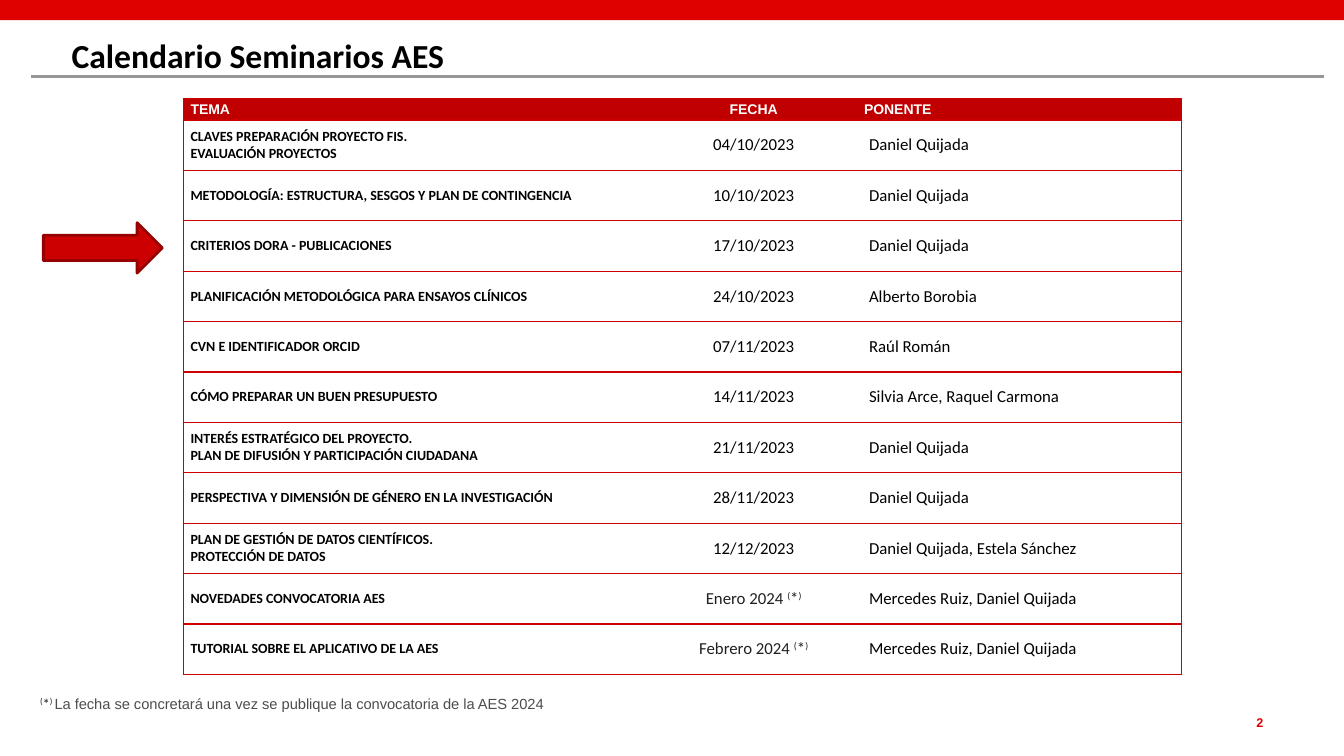
from dataclasses import dataclass

from lxml.etree import SubElement
from pptx import Presentation
from pptx.dml.color import RGBColor
from pptx.enum.shapes import MSO_CONNECTOR, MSO_SHAPE
from pptx.enum.text import MSO_ANCHOR, PP_ALIGN
from pptx.oxml.ns import qn
from pptx.util import Inches, Pt


@dataclass(frozen=True)
class Theme:
    heading_font: str = "Calibri"
    label_font: str = "Arial"
    band: str = "DF0000"
    rule: str = "969696"
    title: str = "010000"
    header: str = "C00000"
    border: str = "CC0000"
    arrow_edge: str = "970000"
    ink: str = "000000"
    pending: str = "202020"
    note: str = "4D4D4D"
    paper: str = "FFFFFF"
    title_size: float = 24
    date_size: float = 12
    note_size: float = 10.5
    topic_size: float = 10
    page_size: float = 9


@dataclass(frozen=True)
class Style:
    font: str
    size: float
    color: str
    bold: bool = False


class SlideBuilder:
    def __init__(self, slide, theme):
        self.slide = slide
        self.theme = theme

    def add_runs(self, paragraph, pieces):
        for wording, style, raised in pieces:
            run = paragraph.add_run()
            run.text = wording
            run.font.name = style.font
            run.font.size = Pt(style.size)
            run.font.bold = style.bold
            run.font.color.rgb = RGBColor.from_string(style.color)
            if raised:
                run._r.get_or_add_rPr().set("baseline", "30000")

    def text(self, box, pieces, inset=(0.1, 0.05), align=PP_ALIGN.LEFT):
        frame = self.slide.shapes.add_textbox(*map(Inches, box)).text_frame
        frame.word_wrap = True
        frame.margin_left = frame.margin_right = Inches(inset[0])
        frame.margin_top = frame.margin_bottom = Inches(inset[1])
        frame.paragraphs[0].alignment = align
        self.add_runs(frame.paragraphs[0], pieces)

    def shape(self, preset, box, fill, edge=None, width=0):
        shape = self.slide.shapes.add_shape(preset, *map(Inches, box))
        shape.shadow.inherit = False
        shape.fill.solid()
        shape.fill.fore_color.rgb = RGBColor.from_string(fill)
        if edge:
            shape.line.color.rgb = RGBColor.from_string(edge)
            shape.line.width = Pt(width)
        else:
            shape.line.fill.background()

    def line(self, start, end, color, width):
        line = self.slide.shapes.add_connector(
            MSO_CONNECTOR.STRAIGHT, *map(Inches, start + end))
        line.line.color.rgb = RGBColor.from_string(color)
        line.line.width = Pt(width)
        SubElement(line._element.spPr, qn("a:effectLst"))

    def table(self, corner, widths, heights):
        table = self.slide.shapes.add_table(
            len(heights), len(widths), *map(Inches, corner),
            Inches(sum(widths)), Inches(sum(heights))).table
        table.horz_banding = False
        for column, width in zip(table.columns, widths):
            column.width = Inches(width)
        for row, height in zip(table.rows, heights):
            row.height = Inches(height)
        return table

    def cell(self, cell, lines, fill, sides, align=PP_ALIGN.LEFT, indent=0):
        cell.vertical_anchor = MSO_ANCHOR.MIDDLE
        cell.margin_left = cell.margin_right = Inches(0.07)
        cell.margin_top = cell.margin_bottom = 0
        frame = cell.text_frame
        for index, pieces in enumerate(lines):
            paragraph = frame.add_paragraph() if index else frame.paragraphs[0]
            paragraph.alignment = align
            if indent:
                paragraph._p.get_or_add_pPr().set("marL", str(Inches(indent)))
            self.add_runs(paragraph, pieces)
        properties = cell._tc.get_or_add_tcPr()
        for side in "LRTB":
            edge = SubElement(properties, qn(f"a:ln{side}"), w=str(Pt(1)))
            if side in sides:
                solid = SubElement(edge, qn("a:solidFill"))
                SubElement(solid, qn("a:srgbClr"), val=self.theme.border)
            else:
                SubElement(edge, qn("a:noFill"))
        cell.fill.solid()
        cell.fill.fore_color.rgb = RGBColor.from_string(fill)


HEADINGS = ("TEMA", "FECHA", "PONENTE")
SEMINARS = (
    ("CLAVES PREPARACIÓN PROYECTO FIS.\nEVALUACIÓN PROYECTOS", "04/10/2023", "Daniel Quijada"),
    ("METODOLOGÍA: ESTRUCTURA, SESGOS Y PLAN DE CONTINGENCIA", "10/10/2023", "Daniel Quijada"),
    ("CRITERIOS DORA - PUBLICACIONES", "17/10/2023", "Daniel Quijada"),
    ("PLANIFICACIÓN METODOLÓGICA PARA ENSAYOS CLÍNICOS", "24/10/2023", "Alberto Borobia"),
    ("CVN E IDENTIFICADOR ORCID", "07/11/2023", "Raúl Román"),
    ("CÓMO PREPARAR UN BUEN PRESUPUESTO", "14/11/2023", "Silvia Arce, Raquel Carmona"),
    ("INTERÉS ESTRATÉGICO DEL PROYECTO.\nPLAN DE DIFUSIÓN Y PARTICIPACIÓN CIUDADANA",
     "21/11/2023", "Daniel Quijada"),
    ("PERSPECTIVA Y DIMENSIÓN DE GÉNERO EN LA INVESTIGACIÓN", "28/11/2023", "Daniel Quijada"),
    ("PLAN DE GESTIÓN DE DATOS CIENTÍFICOS.\nPROTECCIÓN DE DATOS",
     "12/12/2023", "Daniel Quijada, Estela Sánchez"),
    ("NOVEDADES CONVOCATORIA AES", "Enero 2024 ", "Mercedes Ruiz, Daniel Quijada"),
    ("TUTORIAL SOBRE EL APLICATIVO DE LA AES", "Febrero 2024 ", "Mercedes Ruiz, Daniel Quijada"),
)


def asterisk(style, closing=")"):
    return [("(", style, True), ("*", style, False), (closing, style, True)]


def add_calendar(builder):
    theme = builder.theme
    heading = Style(theme.label_font, theme.topic_size, theme.paper, True)
    topic_style = Style(theme.heading_font, theme.topic_size, theme.ink, True)
    detail = Style(theme.heading_font, theme.date_size, theme.ink)
    pending = Style(theme.heading_font, theme.date_size, theme.pending)
    sides = ("LTB", "TB", "RTB")
    aligns = (PP_ALIGN.LEFT, PP_ALIGN.CENTER, PP_ALIGN.LEFT)

    calendar = builder.table((1.82, 0.98), (4.63, 2.05, 3.22), [0.21] + [0.5] * len(SEMINARS))
    for column, label in enumerate(HEADINGS):
        builder.cell(calendar.cell(0, column), [[(label, heading, False)]],
                     theme.header, sides[column], aligns[column])
    for row, (topic, date, speaker) in enumerate(SEMINARS, 1):
        if "/" in date:
            date_pieces = [(date, detail, False)]
        else:
            date_pieces = [(date, pending, False)] + asterisk(pending)
        contents = (
            [[(part, topic_style, False)] for part in topic.split("\n")],
            [date_pieces],
            [[(speaker, detail, False)]],
        )
        for column, lines in enumerate(contents):
            builder.cell(calendar.cell(row, column), lines, theme.paper, sides[column],
                         aligns[column], 0.05 if column == 2 else 0)


def main():
    deck = Presentation()
    deck.slide_width, deck.slide_height = Inches(13.33), Inches(7.5)
    theme = Theme()
    builder = SlideBuilder(deck.slides.add_slide(deck.slide_layouts[6]), theme)

    page = Style(theme.label_font, theme.page_size, theme.band, True)
    builder.text((11.27, 7.09, 1.26, 0.15), [("2", page, False)], (0, 0), PP_ALIGN.RIGHT)
    builder.shape(MSO_SHAPE.RECTANGLE, (0, 0, 13.33, 0.2), theme.band)
    builder.line((0.31, 0.76), (13.13, 0.76), theme.rule, 2.25)
    title = Style(theme.heading_font, theme.title_size, theme.title, True)
    builder.text((0.66, 0.3, 12.22, 0.47), [("Calendario Seminarios AES", title, False)],
                 (0.05, 0.05))
    add_calendar(builder)
    mark = Style(theme.heading_font, theme.note_size, theme.pending)
    note = Style(theme.label_font, theme.note_size, theme.note)
    builder.text((0.3, 6.84, 5.34, 0.28), asterisk(mark, ") ") + [
        ("La fecha se concretará una vez se publique la convocatoria de la AES 2024", note, False)])
    builder.shape(MSO_SHAPE.RIGHT_ARROW, (0.43, 2.21, 1.18, 0.5),
                  theme.border, theme.arrow_edge, 2)
    deck.save("out.pptx")


if __name__ == "__main__":
    main()
